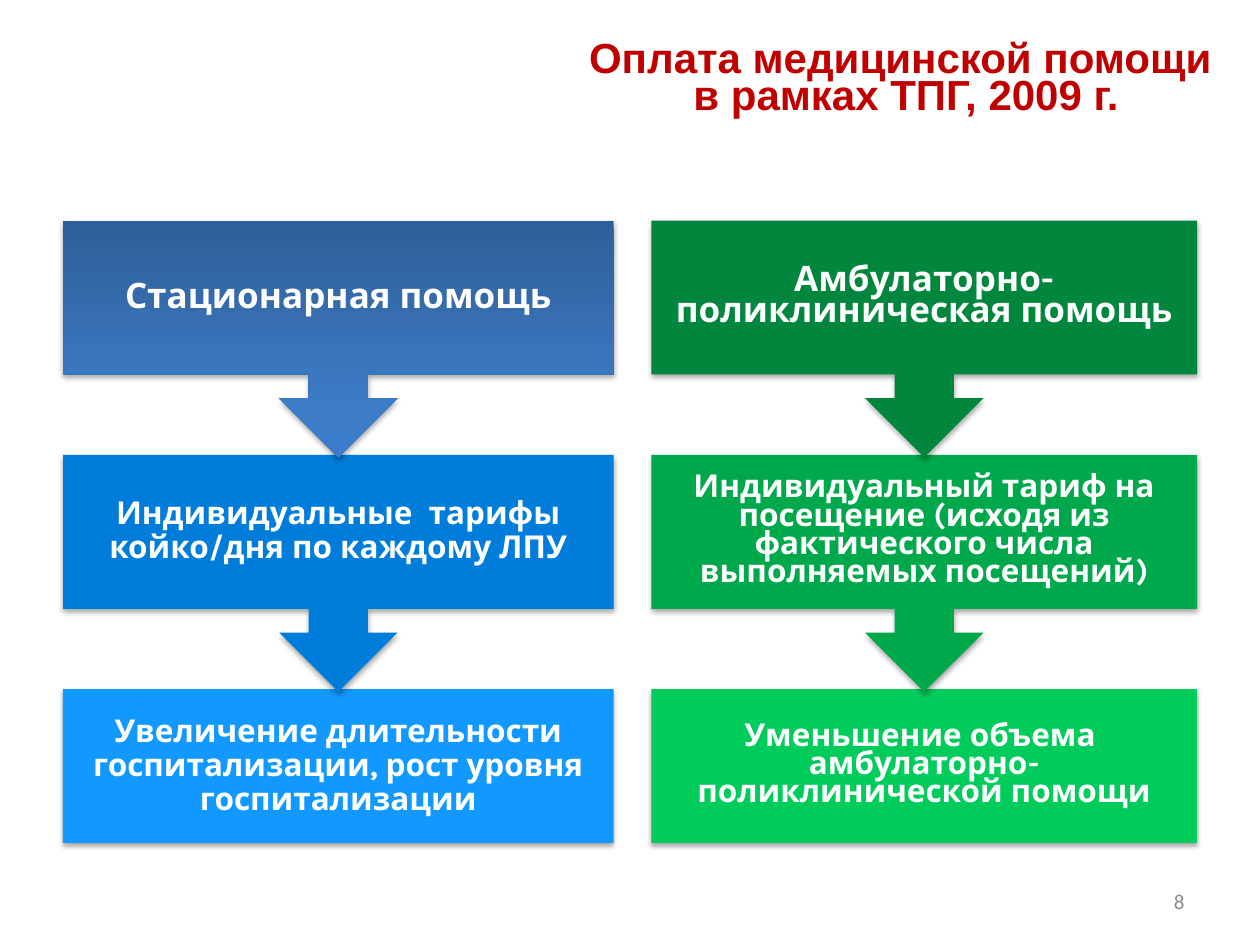
import copy
from dataclasses import dataclass

import pptx
import pptx.dml.color
import pptx.enum.shapes
import pptx.enum.text
import pptx.oxml
import pptx.oxml.ns
import pptx.util

Inches = pptx.util.Inches
Pt = pptx.util.Pt
RGBColor = pptx.dml.color.RGBColor
Shape = pptx.enum.shapes.MSO_SHAPE
Align = pptx.enum.text.PP_ALIGN
Anchor = pptx.enum.text.MSO_ANCHOR

WHITE = RGBColor(0xFF, 0xFF, 0xFF)
RED = RGBColor(0xC0, 0x00, 0x00)
GRAY = RGBColor(0x8C, 0x8C, 0x8C)
NAVY = RGBColor(0x2F, 0x5F, 0x99)
STEEL = RGBColor(0x3D, 0x7C, 0xC7)
DENIM = RGBColor(0x3A, 0x7C, 0xCB)
BLUE = RGBColor(0x00, 0x7D, 0xDA)
SKY = RGBColor(0x11, 0x99, 0xFF)
PINE = RGBColor(0x00, 0x86, 0x3D)
GREEN = RGBColor(0x00, 0xA8, 0x4C)
MINT = RGBColor(0x00, 0xCC, 0x5C)

TOP, STEP = 1.75, 1.86
BOX, CALL = 1.22, 1.88
SHADOW = (
    f'<a:effectLst {pptx.oxml.ns.nsdecls("a")}>'
    '<a:outerShdw blurRad="39370" dist="22860" dir="5400000" rotWithShape="0">'
    '<a:srgbClr val="000000"><a:alpha val="35000"/></a:srgbClr>'
    '</a:outerShdw></a:effectLst>'
)


@dataclass(frozen=True)
class Style:
    font: str
    size: float
    color: RGBColor
    bold: bool = True
    align: Align = Align.CENTER
    space: float = 1.0


@dataclass(frozen=True)
class Stage:
    lines: tuple[str, ...]
    fills: tuple[tuple[float, RGBColor], ...]
    size: float = 18
    inset: float = 0.14


@dataclass(frozen=True)
class Column:
    left: float
    width: float
    space: float
    stages: tuple[Stage, ...]


COLUMNS = (
    Column(0.5, 4.37, 0.9, (
        Stage(("Стационарная помощь",),
              ((0, NAVY), (0.8, STEEL), (1, DENIM)), 20, 0.16),
        Stage(("Индивидуальные  тарифы койко/дня по каждому ЛПУ",), ((0, BLUE),)),
        Stage(("Увеличение длительности госпитализации, рост уровня госпитализации",),
              ((0, SKY),)),
    )),
    Column(5.17, 4.33, 0.75, (
        Stage(("Амбулаторно-поликлиническая помощь",), ((0, PINE),), 20, 0.16),
        Stage(("Индивидуальный тариф на посещение (исходя из фактического числа "
               "выполняемых посещений)",), ((0, GREEN),)),
        Stage(("Уменьшение объема ", "амбулаторно-поликлинической помощи"),
              ((0, MINT),)),
    )),
)


def write(para, lines: tuple[str, ...], style: Style) -> None:
    para.alignment = style.align
    para.line_spacing = style.space
    for num, line in enumerate(lines):
        if num:
            para.add_line_break()
        run = para.add_run()
        run.text = line
        run.font.name = style.font
        run.font.size = Pt(style.size)
        run.font.bold = style.bold
        run.font.color.rgb = style.color


def add_text(slide, left: float, top: float, width: float, height: float,
             paras: tuple[tuple[str, ...], ...], style: Style,
             inset: float | None = None, anchor: Anchor = Anchor.MIDDLE):
    box = slide.shapes.add_textbox(
        Inches(left), Inches(top), Inches(width), Inches(height))
    frame = box.text_frame
    frame.word_wrap = True
    frame.vertical_anchor = anchor
    if inset is not None:
        frame.margin_left = frame.margin_right = Inches(inset)
        frame.margin_top = frame.margin_bottom = Inches(inset)
    for num, lines in enumerate(paras):
        para = frame.add_paragraph() if num else frame.paragraphs[0]
        write(para, lines, style)
    return box


def paint(shape, fills: tuple[tuple[float, RGBColor], ...]) -> None:
    if len(fills) == 1:
        shape.fill.solid()
        shape.fill.fore_color.rgb = fills[0][1]
    else:
        shape.fill.gradient()
        shape.fill.gradient_angle = 90
        row = shape._element.spPr.find(".//" + pptx.oxml.ns.qn("a:gsLst"))
        while len(row) < len(fills):
            row.append(copy.deepcopy(row[-1]))
        for stop, (place, color) in zip(shape.fill.gradient_stops, fills):
            stop.position = place
            stop.color.rgb = color
    shape.line.fill.background()
    shape._element.spPr.append(pptx.oxml.parse_xml(SHADOW))


def add_stage(slide, col: Column, row: int) -> None:
    stage = col.stages[row]
    last = row == len(col.stages) - 1
    top = TOP + row * STEP
    kind = Shape.RECTANGLE if last else Shape.UP_ARROW_CALLOUT
    shape = slide.shapes.add_shape(
        kind, Inches(col.left), Inches(top), Inches(col.width),
        Inches(BOX if last else CALL))
    shape.rotation = 0 if last else 180
    paint(shape, stage.fills)
    style = Style("Karla", stage.size, WHITE, space=col.space)
    add_text(slide, col.left, top, col.width, BOX, (stage.lines,), style, stage.inset)


def main() -> None:
    """Build the slide on how medical care is paid for."""
    deck = pptx.Presentation()
    deck.slide_width, deck.slide_height = Inches(10), Inches(7.5)
    slide = deck.slides.add_slide(deck.slide_layouts[6])
    for col in COLUMNS:
        for row in reversed(range(len(col.stages))):
            add_stage(slide, col, row)
    add_text(slide, 7.17, 6.95, 2.33, 0.4, (("8",),),
             Style("Calibri", 12, GRAY, False, Align.RIGHT))
    title = add_text(slide, 4.29, 0.29, 5.71, 0.71,
                     (("Оплата медицинской помощи",), (" в рамках ТПГ, 2009 г.",)),
                     Style("Arial", 24, RED, space=0.75), anchor=Anchor.TOP)
    title.text_frame.auto_size = pptx.enum.text.MSO_AUTO_SIZE.SHAPE_TO_FIT_TEXT
    deck.save("out.pptx")


if __name__ == "__main__":
    main()
